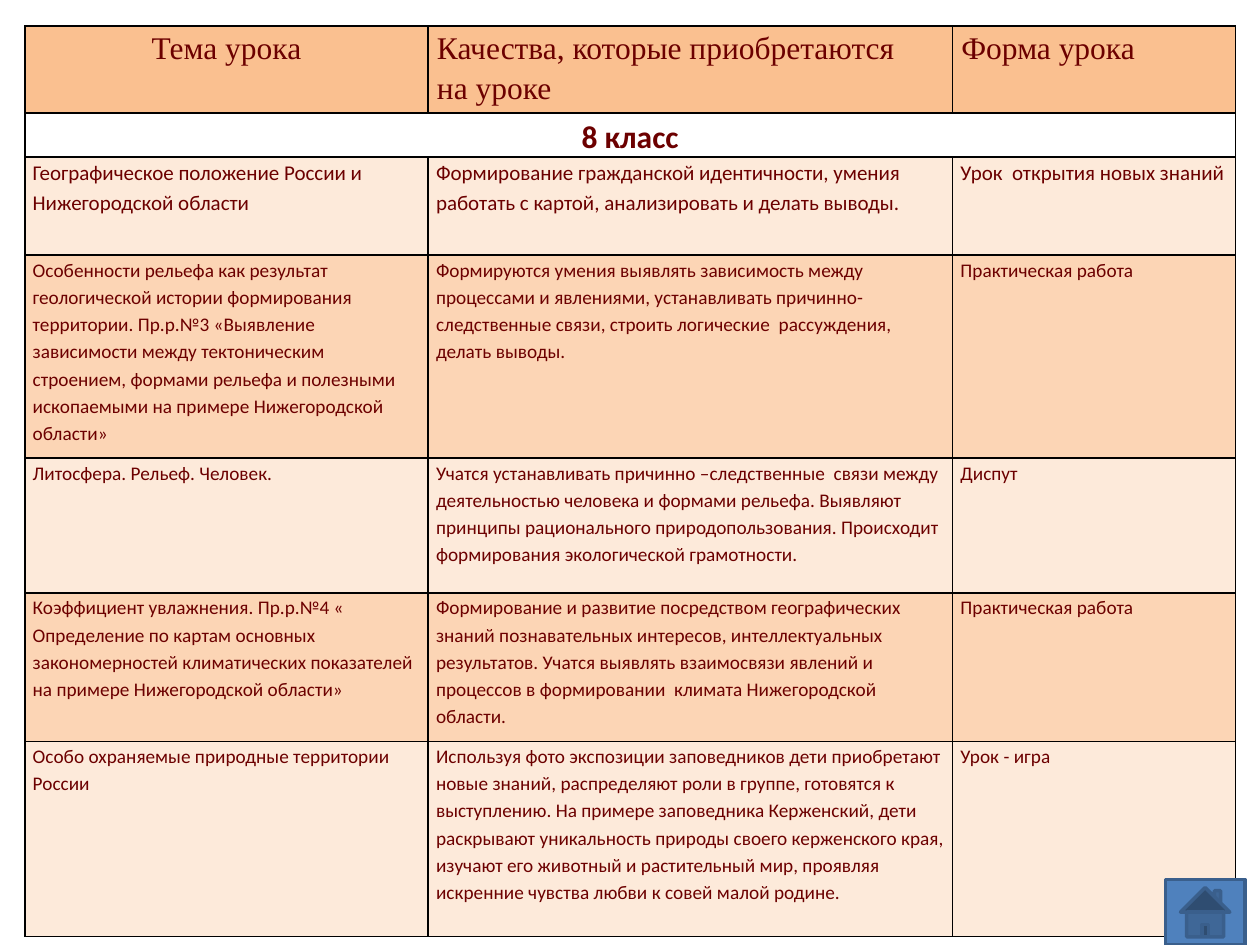
import pptx
import pptx.dml.color
import pptx.enum.shapes
import pptx.enum.text
import pptx.oxml
import pptx.oxml.ns
import pptx.util

Pt = pptx.util.Pt
ALIGN = pptx.enum.text.PP_ALIGN

COLORS = {
    "text": "6C0000",
    "header": "FAC090",
    "light": "FDEADA",
    "dark": "FCD5B5",
    "border": "000000",
    "button": "4F81BD",
    "button_line": "3A5F8C",
}

COL_WIDTHS = [230.5, 299.7, 161.5]
ROW_HEIGHTS = [49.5, 24.5, 56, 116, 77, 84.9, 111.6]

HEADER = ["Тема урока", "Качества, которые приобретаются\vна уроке", "Форма урока"]
GRADE = "8 класс"
LESSONS = [
    ["Географическое положение России и Нижегородской области",
     "Формирование гражданской идентичности, умения работать с картой, "
     "анализировать и делать выводы.",
     "Урок  открытия новых знаний"],
    ["Особенности рельефа как результат геологической истории формирования "
     "территории. Пр.р.№3 «Выявление зависимости между тектоническим строением, "
     "формами рельефа и полезными ископаемыми на примере Нижегородской области»",
     "Формируются умения выявлять зависимость между процессами и явлениями, "
     "устанавливать причинно-следственные связи, строить логические  рассуждения, "
     "делать выводы.",
     "Практическая работа"],
    ["Литосфера. Рельеф. Человек.",
     "Учатся устанавливать причинно –следственные  связи между деятельностью "
     "человека и формами рельефа. Выявляют принципы рационального "
     "природопользования. Происходит формирования экологической грамотности.",
     "Диспут"],
    ["Коэффициент увлажнения. Пр.р.№4 « Определение по картам основных "
     "закономерностей климатических показателей на примере Нижегородской области»",
     "Формирование и развитие посредством географических знаний познавательных "
     "интересов, интеллектуальных результатов. Учатся выявлять взаимосвязи явлений "
     "и процессов в формировании  климата Нижегородской области.",
     "Практическая работа"],
    ["Особо охраняемые природные территории России",
     "Используя фото экспозиции заповедников дети приобретают новые знаний, "
     "распределяют роли в группе, готовятся к выступлению. На примере заповедника "
     "Керженский, дети раскрывают уникальность природы своего керженского края, "
     "изучают его животный и растительный мир, проявляя искренние чувства любви к "
     "совей малой родине.",
     "Урок - игра"],
]


def rgb(name):
    return pptx.dml.color.RGBColor.from_string(COLORS[name])


def set_text(tf, text, size=11, font="Calibri", bold=False, align=ALIGN.LEFT):
    p = tf.paragraphs[0]
    p.text = text
    p.alignment = align
    p.line_spacing = 1.15
    for r in p.runs:
        r.font.size = Pt(size)
        r.font.name = font
        r.font.bold = bold
        r.font.color.rgb = rgb("text")


def set_cell(cell, fill=None, margin=4.5):
    cell.margin_left = cell.margin_right = Pt(margin)
    cell.margin_top = cell.margin_bottom = 0
    # Borders come before the fill in the cell properties
    tc_pr = cell._tc.get_or_add_tcPr()
    for side in ("lnL", "lnR", "lnT", "lnB"):
        tc_pr.append(pptx.oxml.parse_xml(
            f'<a:{side} {pptx.oxml.ns.nsdecls("a")} w="{Pt(1)}"><a:solidFill>'
            f'<a:srgbClr val="{COLORS["border"]}"/></a:solidFill></a:{side}>'))
    if fill:
        cell.fill.solid()
        cell.fill.fore_color.rgb = rgb(fill)
    else:
        cell.fill.background()


def add_lesson_table(s):
    table = s.shapes.add_table(len(ROW_HEIGHTS), len(COL_WIDTHS), Pt(14.2), Pt(15),
                               Pt(sum(COL_WIDTHS)), Pt(sum(ROW_HEIGHTS))).table
    for column, width in zip(table.columns, COL_WIDTHS):
        column.width = Pt(width)
    for row, height in zip(table.rows, ROW_HEIGHTS):
        row.height = Pt(height)

    # Header row
    for c, text in enumerate(HEADER):
        cell = table.cell(0, c)
        set_cell(cell, "header", margin=5)
        set_text(cell.text_frame, text, size=18, font="Times New Roman",
                 align=ALIGN.LEFT if c else ALIGN.CENTER)

    # Grade row across all columns
    for c in range(len(HEADER)):
        set_cell(table.cell(1, c), margin=5)
    table.cell(1, 0).merge(table.cell(1, len(HEADER) - 1))
    set_text(table.cell(1, 0).text_frame, GRADE, size=18, bold=True, align=ALIGN.CENTER)

    # Lessons in alternating shades
    for i, lesson in enumerate(LESSONS):
        for c, text in enumerate(lesson):
            cell = table.cell(i + 2, c)
            set_cell(cell, "dark" if i % 2 else "light")
            set_text(cell.text_frame, text, size=11 if i else 12)


def add_home_button(s):
    sp = s.shapes.add_shape(pptx.enum.shapes.MSO_SHAPE.ACTION_BUTTON_HOME,
                            Pt(666), Pt(502.5), Pt(45.4), Pt(37.5))
    sp.shadow.inherit = False
    sp.fill.solid()
    sp.fill.fore_color.rgb = rgb("button")
    sp.line.color.rgb = rgb("button_line")
    sp.line.width = Pt(2)


def main():
    prs = pptx.Presentation()
    prs.slide_width, prs.slide_height = Pt(720), Pt(540)
    s = prs.slides.add_slide(prs.slide_layouts[6])
    add_lesson_table(s)
    add_home_button(s)
    prs.save("out.pptx")


if __name__ == "__main__":
    main()
